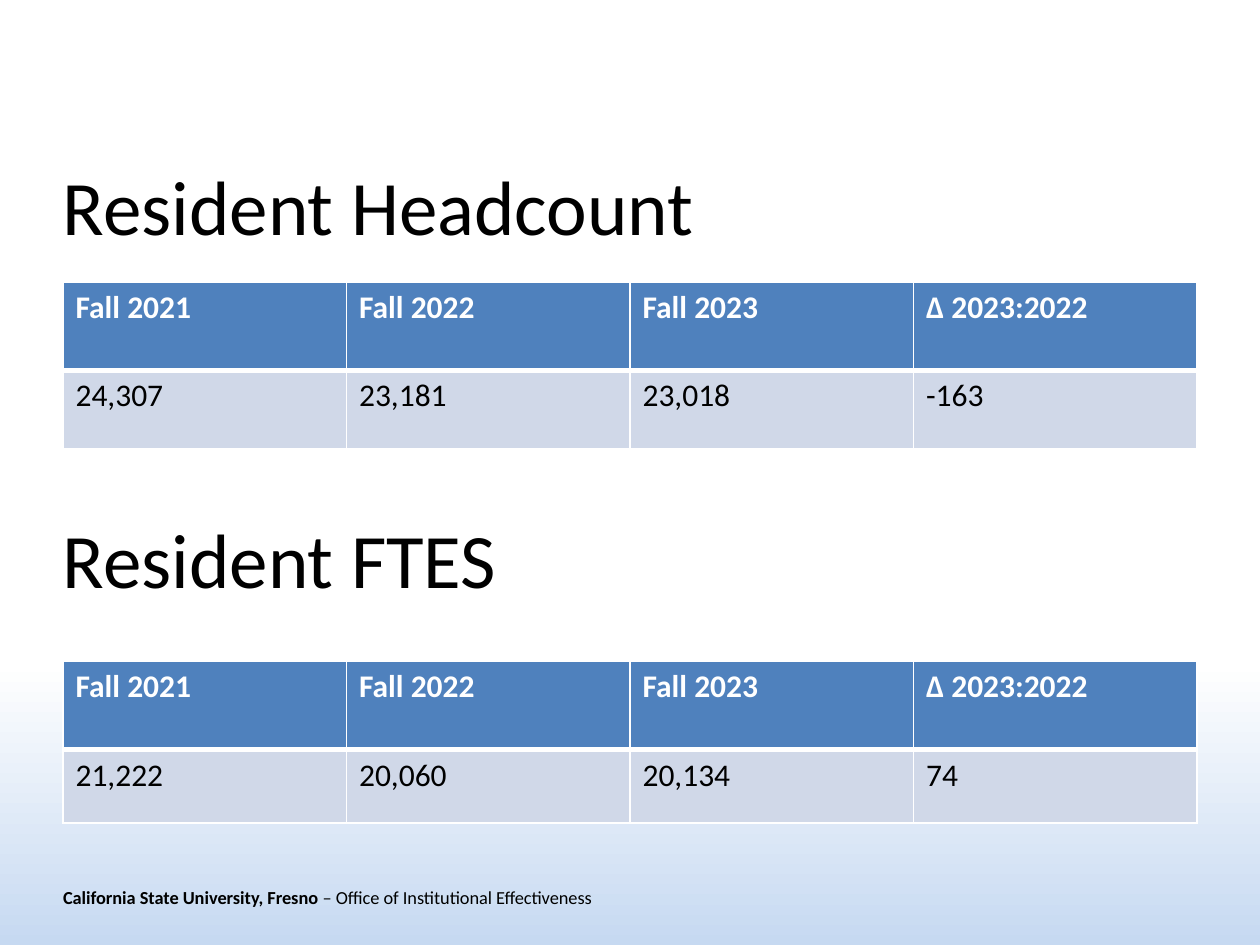
import pptx
import pptx.dml.color
import pptx.enum.text
import pptx.oxml
import pptx.oxml.ns
import pptx.util

Pt = pptx.util.Pt
ANCHOR = pptx.enum.text.MSO_ANCHOR
HEADINGS = ["Fall 2021", "Fall 2022", "Fall 2023", "Δ 2023:2022"]
LEFT, WIDTH = 36, 648


def color(hex_value):
    """Turn a hex string into a colour."""
    return pptx.dml.color.RGBColor.from_string(hex_value)


def add_run(paragraph, text, size, hex_value="000000", bold=False):
    """Add one styled run to a paragraph."""
    run = paragraph.add_run()
    run.text = text
    run.font.name = "Calibri"
    run.font.size = Pt(size)
    run.font.bold = bold
    run.font.color.rgb = color(hex_value)


def add_text(slide, top, width, height, runs, size):
    """Add a vertically centred line of (text, bold) runs at the left margin."""
    box = slide.shapes.add_textbox(Pt(LEFT), Pt(top), Pt(width), Pt(height))
    frame = box.text_frame
    frame.word_wrap = True
    frame.vertical_anchor = ANCHOR.MIDDLE
    frame.margin_left = frame.margin_right = 0
    for text, bold in runs:
        add_run(frame.paragraphs[0], text, size, bold=bold)


def add_borders(cell, top, bottom):
    """Give a cell white borders, with its own top and bottom widths."""
    properties = cell._tc.get_or_add_tcPr()
    for side, width in (("L", 1), ("R", 1), ("T", top), ("B", bottom)):
        properties.append(pptx.oxml.parse_xml(
            f'<a:ln{side} {pptx.oxml.ns.nsdecls("a")} w="{Pt(width)}">'
            f'<a:solidFill><a:srgbClr val="FFFFFF"/></a:solidFill></a:ln{side}>'))


def fill_row(table, row, texts, fill, text_color, bold, borders):
    """Write and style one table row."""
    for column, text in enumerate(texts):
        cell = table.cell(row, column)
        add_borders(cell, *borders)
        cell.fill.solid()
        cell.fill.fore_color.rgb = color(fill)
        add_run(cell.text_frame.paragraphs[0], text, 18, text_color, bold)


def add_counts(slide, top, values, value_height):
    """Add a table of yearly counts below its headings."""
    heading_height = 50.4
    table = slide.shapes.add_table(
        2, len(HEADINGS), Pt(LEFT), Pt(top), Pt(WIDTH),
        Pt(heading_height + value_height)).table
    table.rows[0].height = Pt(heading_height)
    table.rows[1].height = Pt(value_height)
    fill_row(table, 0, HEADINGS, "4F81BD", "FFFFFF", True, (1, 3))
    fill_row(table, 1, values, "D0D8E8", "000000", False, (3, 1))


def set_background(slide):
    """Fade the background from white to pale blue at the bottom."""
    fill = slide.background.fill
    fill.gradient()
    fill.gradient_angle = 270
    for stop, position, hex_value in zip(
            fill.gradient_stops, (0.7, 1), ("FFFFFF", "C6D9F1")):
        stop.position = position
        stop.color.rgb = color(hex_value)


def main():
    """Build the enrolment slide."""
    deck = pptx.Presentation()
    deck.slide_width, deck.slide_height = Pt(720), Pt(540)
    slide = deck.slides.add_slide(deck.slide_layouts[6])
    set_background(slide)
    add_text(slide, 498.2, 414, 28.8,
             [("California State University, Fresno ", True),
              ("– Office of Institutional Effectiveness", False)], 10.5)
    add_text(slide, 72, WIDTH, 90, [("Resident Headcount", False)], 44)
    add_counts(slide, 161.3, ["24,307", "23,181", "23,018", "-163"], 44.6)
    add_text(slide, 288.7, 260, 60.5, [("Resident FTES", False)], 44)
    add_counts(slide, 378, ["21,222", "20,060", "20,134", "74"], 41.8)
    deck.save("out.pptx")


if __name__ == "__main__":
    main()
